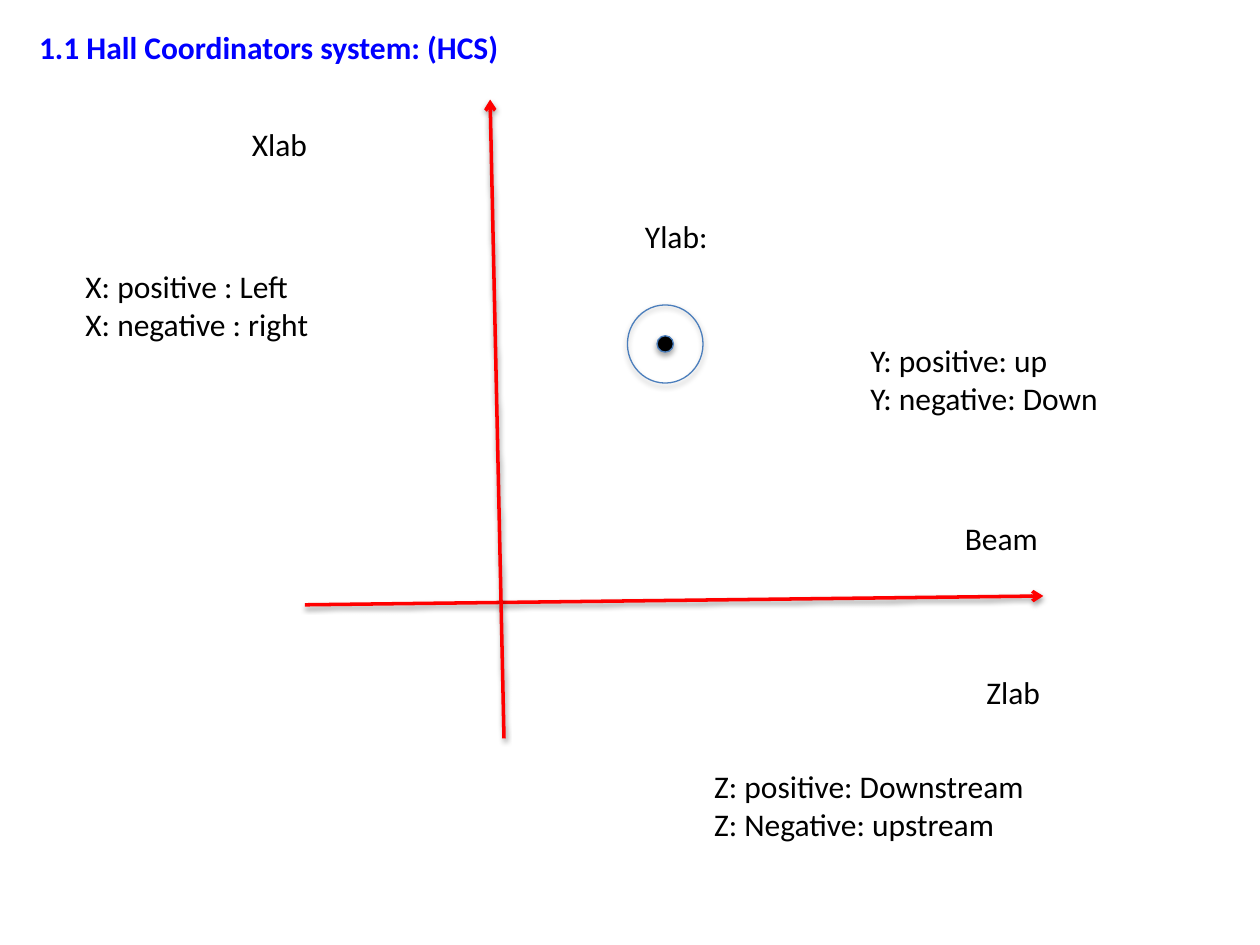
"""Build the Hall Coordinators system slide with its axes and direction notes."""
from dataclasses import dataclass

from lxml.etree import SubElement
from pptx import Presentation
from pptx.dml.color import RGBColor as RGB
from pptx.enum.shapes import MSO_CONNECTOR as CONN, MSO_SHAPE as SHAPE
from pptx.enum.text import MSO_ANCHOR as ANCHOR, MSO_AUTO_SIZE as FIT, PP_ALIGN as ALIGN
from pptx.oxml.ns import qn
from pptx.util import Inches, Pt


@dataclass(frozen=True)
class Theme:
    font: str = "Calibri"
    size: float = 18
    title: RGB = RGB(0, 0, 255)
    ink: RGB = RGB(0, 0, 0)
    axis: RGB = RGB(255, 0, 0)
    outline: RGB = RGB(0x4B, 0x7E, 0xBC)
    axis_width: float = 2
    outline_width: float = 0.75


THEME = Theme()
SLIDE = (10, 7.5)
LINE_STEP, BOX_PAD = 0.3, 0.1
TITLE = ("1.1 Hall Coordinators system: (HCS)", 0.21, 0.17, 7.53)
LABELS = [
    ("Zlab", 7.73, 5.29, 0.92),
    ("Xlab", 1.9, 0.94, 0.96),
    ("Beam", 7.56, 4.07, 1.33),
    ("Ylab:", 5.02, 1.67, 1.11),
    ("X: positive : Left\nX: negative : right", 0.58, 2.07, 2.53),
    ("Z: positive: Downstream\nZ: Negative: upstream", 5.57, 6.04, 3.57),
    ("Y: positive: up\nY: negative: Down", 6.81, 2.66, 2.48),
]
AXES = [(2.42, 4.8, 8.28, 4.73), (4, 5.86, 3.89, 0.79)]
Y_CENTRE = (5.28, 2.73)
Y_RINGS = [(0.6, 0.62, None), (0.13, 0.13, THEME.ink)]


def inches(*values):
    return [Inches(v) for v in values]


def write(sp, text, left, top, width, color, bold=False):
    height = BOX_PAD + LINE_STEP * len(text.split("\n"))
    sp.left, sp.top, sp.width, sp.height = inches(left, top, width, height)
    tf = sp.text_frame
    tf.text = text
    tf.word_wrap = True
    tf.auto_size = FIT.SHAPE_TO_FIT_TEXT
    tf.vertical_anchor = ANCHOR.TOP
    for p in tf.paragraphs:
        p.alignment = ALIGN.LEFT
        font = p.runs[0].font
        font.name, font.size, font.bold = THEME.font, Pt(THEME.size), bold
        font.color.rgb = color


def add_axis(slide, ends):
    line = slide.shapes.add_connector(CONN.STRAIGHT, *inches(*ends)).line
    line.color.rgb = THEME.axis
    line.width = Pt(THEME.axis_width)
    SubElement(line._get_or_add_ln(), qn("a:tailEnd"), type="arrow")


def add_ring(slide, width, height, fill):
    x, y = Y_CENTRE
    box = inches(x - width / 2, y - height / 2, width, height)
    sp = slide.shapes.add_shape(SHAPE.OVAL, *box)
    if fill is None:
        sp.fill.background()
    else:
        sp.fill.solid()
        sp.fill.fore_color.rgb = fill
    sp.line.color.rgb = THEME.outline
    sp.line.width = Pt(THEME.outline_width)


def main():
    prs = Presentation()
    prs.slide_width, prs.slide_height = inches(*SLIDE)
    slide = prs.slides.add_slide(prs.slide_layouts[5])
    write(slide.shapes.title, *TITLE, THEME.title, bold=True)
    for ends in AXES:
        add_axis(slide, ends)
    for ring in Y_RINGS:
        add_ring(slide, *ring)
    for label in LABELS:
        write(slide.shapes.add_textbox(0, 0, 0, 0), *label, THEME.ink)
    prs.save("out.pptx")


if __name__ == "__main__":
    main()
